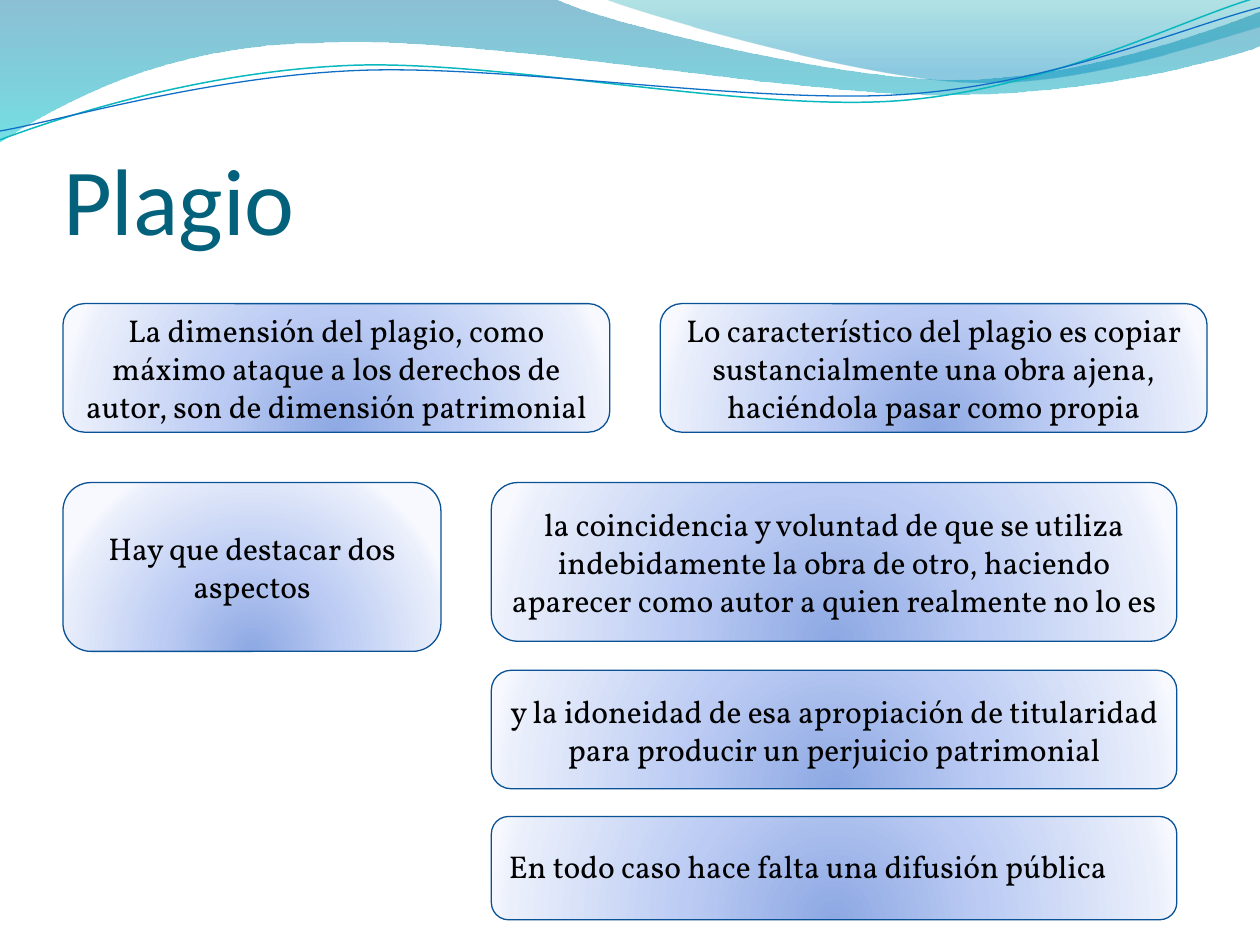
from lxml.etree import SubElement
from pptx import Presentation
from pptx.dml.color import RGBColor
from pptx.enum.shapes import MSO_SHAPE
from pptx.enum.text import MSO_ANCHOR, MSO_AUTO_SIZE, PP_ALIGN
from pptx.oxml import parse_xml
from pptx.oxml.ns import nsdecls, qn
from pptx.util import Inches, Pt

COLORS = {
    "title": "04617B", "text": "000000", "border": "095295",
    "teal_line": "0AB8BF", "blue_line": "0F6FC6",
}
# Gradient stops: position %, colour, opacity %
BOX_STOPS = [(0, "8DA8E3", 100), (43, "BBCBF3", 100),
             (93, "EAEFFB", 100), (100, "F7F9FF", 100)]
GLOW = ('<a:path path="circle">'
        '<a:fillToRect l="50000" t="130000" r="50000" b="-30000"/></a:path>')
DOWNWARD = '<a:lin ang="5400000" scaled="1"/>'

# Each wave: start point, then lines (x, y) or Bézier curves (x1, y1, x2, y2, x, y)
WAVE_BANDS = [
    ([(0, -0.01), (4.4, -0.01), (4.76, 0.17, 6.64, 0.63, 7.58, 0.63),
      (8.53, 0.63, 9.58, 0.26, 10, 0.09), (10.01, 0.36),
      (9.83, 0.44, 8.7, 0.76, 7.46, 0.75), (6.22, 0.75, 3.82, 0.28, 2.57, 0.34),
      (1.29, 0.35, 0.46, 0.83, -0.01, 1.13)],
     [(0, "0074A1", 45), (100, "00C6CF", 55)]),
    ([(4.79, -0.01), (5.09, 0.11, 6.82, 0.62, 7.69, 0.65),
      (8.56, 0.69, 9.61, 0.32, 10, 0.21), (10, 0)],
     [(0, "00A1A9", 30), (80, "008BBF", 45)]),
]
WAVE_LINES = [
    ([(0, 1.11), (0.48, 0.93, 1.58, 0.57, 2.77, 0.52),
      (3.95, 0.47, 5.93, 0.89, 7.13, 0.8), (8.33, 0.71, 9.38, 0.15, 9.98, -0.02)],
     "teal_line", 0.85),
    ([(0, 1.04), (0.47, 0.96, 1.64, 0.61, 2.83, 0.56),
      (4.03, 0.51, 5.97, 0.83, 7.17, 0.75), (8.36, 0.67, 9.41, 0.21, 10, 0.06)],
     "blue_line", 0.75),
]

LEFT, ROW_1, ROW_2 = 0.5, 2.41, 3.83
ASPECT_X, ASPECT_W = 3.9, 5.44
BOXES = [
    (LEFT, ROW_1, 4.34, 1.02, "La dimensión del plagio, como máximo ataque a los "
     "derechos de autor, son de dimensión patrimonial"),
    (5.24, ROW_1, 4.34, 1.02, "Lo característico del plagio es copiar sustancialmente "
     "una obra ajena, haciéndola pasar como propia"),
    (LEFT, ROW_2, 3, 1.34, "Hay que destacar dos aspectos"),
    (ASPECT_X, ROW_2, ASPECT_W, 1.26, "la coincidencia y voluntad de que se utiliza "
     "indebidamente la obra de otro, haciendo aparecer como autor a quien realmente "
     "no lo es"),
    (ASPECT_X, 5.32, ASPECT_W, 0.94, "y la idoneidad de esa apropiación de titularidad "
     "para producir un perjuicio patrimonial"),
]


def bend_segments(sp, segments):
    """Join the three straight steps of each Bézier segment into one curve."""
    path = sp._element.spPr.find(".//" + qn("a:path"))
    steps = iter(path.findall(qn("a:lnTo")))
    for segment in segments:
        step = next(steps)
        if len(segment) == 6:
            curve = SubElement(path, qn("a:cubicBezTo"))
            path.replace(step, curve)
            curve.append(step[0])
            for _ in range(2):
                control = next(steps)
                curve.append(control[0])
                path.remove(control)


def set_gradient(sp, stops, direction):
    gs = "".join(
        f'<a:gs pos="{pos * 1000}"><a:srgbClr val="{color}">'
        f'<a:alpha val="{alpha * 1000}"/></a:srgbClr></a:gs>'
        for pos, color, alpha in stops)
    sp.fill.background()
    spPr = sp._element.spPr
    spPr.replace(spPr.find(qn("a:noFill")), parse_xml(
        f'<a:gradFill {nsdecls("a")} rotWithShape="1">'
        f'<a:gsLst>{gs}</a:gsLst>{direction}</a:gradFill>'))


class SlideBuilder:
    title_font, body_font = "Calibri", "Vollkorn"

    def __init__(self, slide):
        self.s = slide

    def color(self, name):
        return RGBColor.from_string(COLORS[name])

    def outline(self, sp, color, width):
        sp.line.color.rgb = self.color(color)
        sp.line.width = Pt(width)

    def style_text(self, p, font, size, color):
        p.font.name, p.font.size = font, Pt(size)
        p.font.color.rgb = self.color(color)

    def wave(self, path, close):
        points = [(Inches(seg[i]), Inches(seg[i + 1]))
                  for seg in path for i in range(0, len(seg), 2)]
        builder = self.s.shapes.build_freeform(*points[0])
        builder.add_line_segments(points[1:], close=close)
        sp = builder.convert_to_shape()
        bend_segments(sp, path[1:])
        sp.shadow.inherit = False
        return sp

    def wave_band(self, path, stops):
        sp = self.wave(path, close=True)
        set_gradient(sp, stops, DOWNWARD)
        sp.line.fill.background()

    def wave_line(self, path, color, width):
        sp = self.wave(path, close=False)
        sp.fill.background()
        self.outline(sp, color, width)

    def title(self, text, x, y, w, h):
        sp = self.s.shapes.title
        sp.left, sp.top, sp.width, sp.height = map(Inches, (x, y, w, h))
        tf = sp.text_frame
        tf.text = text
        tf.auto_size = MSO_AUTO_SIZE.NONE
        tf.vertical_anchor = MSO_ANCHOR.BOTTOM
        tf.margin_left = tf.margin_right = tf.margin_bottom = 0
        p = tf.paragraphs[0]
        p.alignment = PP_ALIGN.LEFT
        self.style_text(p, self.title_font, 54, "title")

    def box(self, x, y, w, h, text, align=PP_ALIGN.CENTER, spacing=None):
        sp = self.s.shapes.add_shape(
            MSO_SHAPE.ROUNDED_RECTANGLE, *map(Inches, (x, y, w, h)))
        sp.shadow.inherit = False
        set_gradient(sp, BOX_STOPS, GLOW)
        self.outline(sp, "border", 0.75)
        tf = sp.text_frame
        tf.word_wrap = True
        tf.vertical_anchor = MSO_ANCHOR.MIDDLE
        tf.text = text
        p = tf.paragraphs[0]
        p.alignment, p.line_spacing = align, spacing
        self.style_text(p, self.body_font, 18, "text")


def main():
    prs = Presentation()
    prs.slide_width, prs.slide_height = Inches(10), Inches(7.5)
    b = SlideBuilder(prs.slides.add_slide(prs.slide_layouts[5]))
    for band in WAVE_BANDS:
        b.wave_band(*band)
    for line in WAVE_LINES:
        b.wave_line(*line)
    b.title("Plagio", 0.5, 0.77, 9.08, 1.25)
    for box in BOXES:
        b.box(*box)
    b.box(ASPECT_X, 6.48, ASPECT_W, 0.82,
          "En todo caso hace falta una difusión pública", PP_ALIGN.LEFT, 0.9)
    prs.save("out.pptx")


if __name__ == "__main__":
    main()
